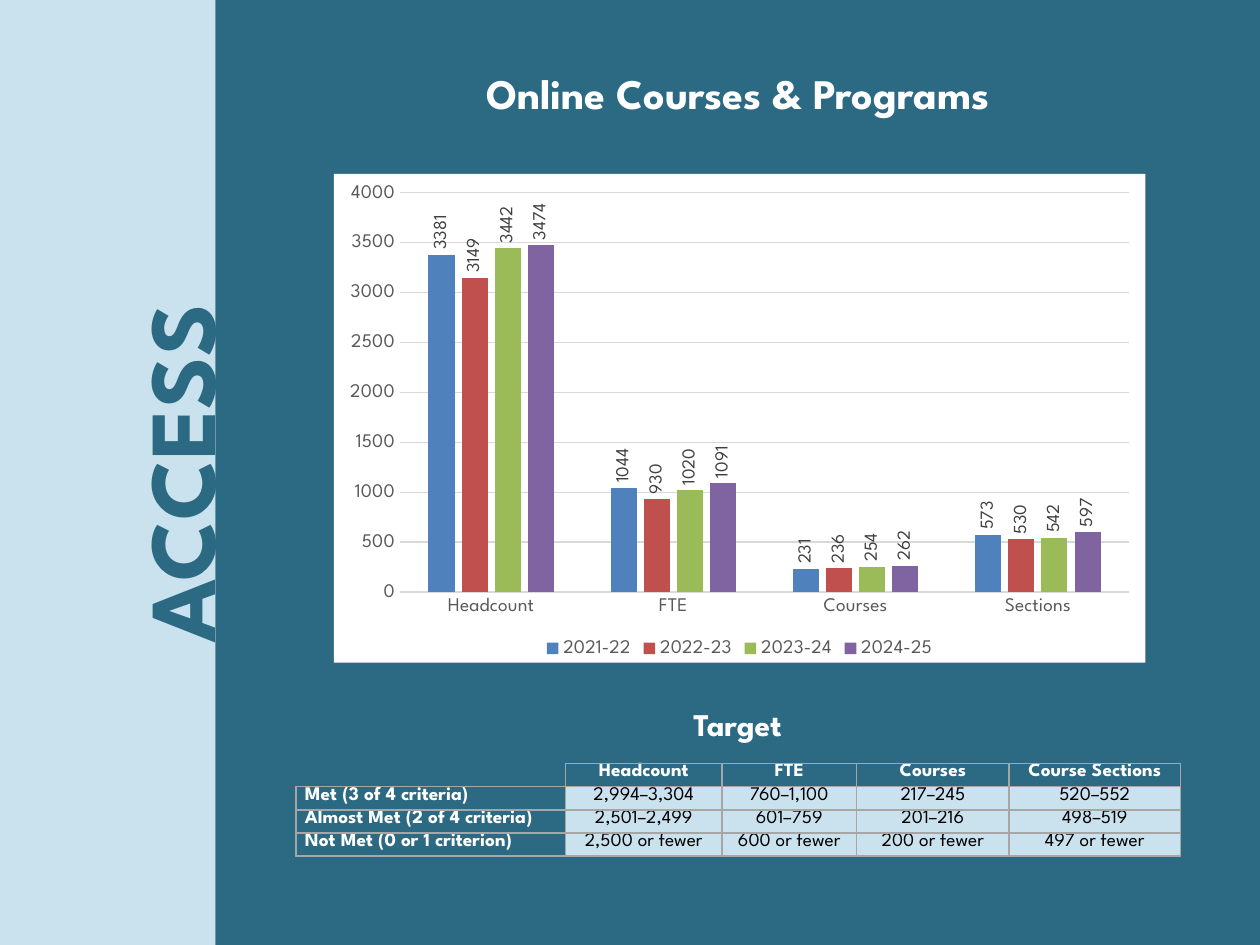
from dataclasses import dataclass

from lxml import etree
from pptx import Presentation
from pptx.chart.data import CategoryChartData
from pptx.dml.color import RGBColor
from pptx.enum import chart as ch, shapes, text
from pptx.oxml import parse_xml
from pptx.oxml.ns import nsdecls, qn
from pptx.util import Inches, Pt


@dataclass(frozen=True)
class Theme:
    font: str = "League Spartan"
    teal: str = "2C6983"
    pale: str = "C9E2ED"
    white: str = "FFFFFF"
    black: str = "000000"
    axis: str = "595959"
    label: str = "404040"
    grid: str = "D9D9D9"
    border: str = "A6A6A6"
    series: tuple = ("4F81BD", "C0504D", "9BBB59", "8064A2")
    banner: float = 54
    title: float = 24
    subtitle: float = 18
    body: float = 11
    data_label: float = 10.5


@dataclass(frozen=True)
class Box:
    left: float
    top: float
    width: float
    height: float

    def inches(self) -> tuple:
        return tuple(Inches(v) for v in (self.left, self.top, self.width, self.height))


@dataclass(frozen=True)
class Heading:
    wording: str
    box: Box
    size: float
    color: str
    rotation: float = 0
    space_after: float = 0


T = Theme()

PANELS = [(Box(0, 0, 1.71, 7.5), T.pale), (Box(1.71, 0, 8.29, 7.5), T.teal)]
HEADINGS = [
    Heading("ACCESS", Box(-2.33, 3.25, 7.5, 1.01), T.banner, T.teal, rotation=270),
    Heading("Online Courses & Programs", Box(2.03, 0.49, 7.65, 0.5), T.title, T.white,
            space_after=12),
    Heading("Target", Box(3.97, 5.55, 3.77, 0.4), T.subtitle, T.white),
]
CATEGORIES = ["Headcount", "FTE", "Courses", "Sections"]
YEARS = {
    "2021-22": (3381, 1044, 231, 573),
    "2022-23": (3149, 930, 236, 530),
    "2023-24": (3442, 1020, 254, 542),
    "2024-25": (3474, 1091, 262, 597),
}
TARGET_WIDTHS = [2.14, 1.24, 1.07, 1.21, 1.36]
TARGETS = [
    ["", "Headcount", "FTE", "Courses", "Course Sections"],
    ["Met (3 of 4 criteria)", "2,994–3,304", "760–1,100", "217–245", "520–552"],
    ["Almost Met (2 of 4 criteria)", "2,501–2,499", "601–759", "201–216", "498–519"],
    ["Not Met (0 or 1 criterion)", "2,500 or fewer", "600 or fewer", "200 or fewer",
     "497 or fewer"],
]


def style_font(font, size: float, color: str, bold: bool = False) -> None:
    font.name, font.size, font.bold = T.font, Pt(size), bold
    font.color.rgb = RGBColor.from_string(color)


def set_fill(fill, color: str) -> None:
    fill.solid()
    fill.fore_color.rgb = RGBColor.from_string(color)


def set_line(line, color: str, width: float) -> None:
    set_fill(line.fill, color)
    line.width = Pt(width)


def add_panel(slide, box: Box, color: str) -> None:
    sp = slide.shapes.add_shape(shapes.MSO_SHAPE.RECTANGLE, *box.inches())
    sp.shadow.inherit = False
    set_fill(sp.fill, color)
    sp.line.fill.background()


def add_heading(slide, heading: Heading) -> None:
    sp = slide.shapes.add_textbox(*heading.box.inches())
    sp.rotation = heading.rotation
    tf = sp.text_frame
    tf.word_wrap = True
    tf.auto_size = text.MSO_AUTO_SIZE.SHAPE_TO_FIT_TEXT
    p = tf.paragraphs[0]
    p.text = heading.wording
    p.alignment = text.PP_ALIGN.CENTER
    p.space_after = Pt(heading.space_after)
    style_font(p.runs[0].font, heading.size, heading.color, bold=True)


def add_enrollment_chart(slide, box: Box) -> None:
    data = CategoryChartData(number_format="0")
    data.categories = CATEGORIES
    for year, values in YEARS.items():
        data.add_series(year, values)
    chart = slide.shapes.add_chart(
        ch.XL_CHART_TYPE.COLUMN_CLUSTERED, *box.inches(), data).chart
    style_font(chart.font, T.body, T.black)
    chart.has_title = False

    # White chart area
    area = parse_xml(
        f'<c:spPr {nsdecls("c", "a")}><a:solidFill><a:srgbClr val="{T.white}"/>'
        '</a:solidFill><a:ln><a:noFill/></a:ln></c:spPr>')
    chart._chartSpace.find(qn("c:chart")).addnext(area)

    # Axes and legend
    for axis in (chart.category_axis, chart.value_axis):
        axis.major_tick_mark = axis.minor_tick_mark = ch.XL_TICK_MARK.NONE
        style_font(axis.tick_labels.font, T.body, T.axis)
    set_line(chart.category_axis.format.line, T.grid, 0.75)
    values = chart.value_axis
    values.minimum_scale, values.maximum_scale, values.major_unit = 0, 4000, 500
    values.format.line.fill.background()
    set_line(values.major_gridlines.format.line, T.grid, 0.75)
    chart.has_legend = True
    chart.legend.position = ch.XL_LEGEND_POSITION.BOTTOM
    chart.legend.include_in_layout = False
    style_font(chart.legend.font, T.body, T.axis)

    # Columns with upright labels
    plot = chart.plots[0]
    plot.gap_width, plot.overlap, plot.vary_by_categories = 219, -27, False
    for series, color in zip(plot.series, T.series):
        set_fill(series.format.fill, color)
        series.invert_if_negative = False
        labels = series.data_labels
        labels.show_value = True
        labels.number_format, labels.number_format_is_linked = "0", False
        labels.position = ch.XL_LABEL_POSITION.OUTSIDE_END
        style_font(labels.font, T.data_label, T.label)
        body = labels._element.find(qn("c:txPr")).find(qn("a:bodyPr"))
        body.set("rot", "-5400000")
        body.set("vert", "horz")


def set_borders(cell, hidden: str = "") -> None:
    props = cell._tc.get_or_add_tcPr()
    for index, side in enumerate("LRTB"):
        paint = "<a:noFill/>" if side in hidden else (
            f'<a:solidFill><a:srgbClr val="{T.border}"/></a:solidFill>')
        props.insert(index, parse_xml(
            f'<a:ln{side} {nsdecls("a")} w="{Pt(1)}">{paint}</a:ln{side}>'))


def add_target_table(slide, box: Box) -> None:
    table = slide.shapes.add_table(len(TARGETS), len(TARGET_WIDTHS), *box.inches()).table
    table.first_row = table.horz_banding = False
    for column, width in zip(table.columns, TARGET_WIDTHS):
        column.width = Inches(width)
    for i, row in enumerate(TARGETS):
        for j, wording in enumerate(row):
            cell = table.cell(i, j)
            is_value = i > 0 and j > 0
            cell.margin_left = cell.margin_right = Inches(0.07)
            cell.margin_top = cell.margin_bottom = 0
            set_fill(cell.fill, T.pale if is_value else T.teal)
            set_borders(cell, hidden="" if wording else "LT")
            p = cell.text_frame.paragraphs[0]
            p.alignment = text.PP_ALIGN.CENTER if j else text.PP_ALIGN.LEFT
            if wording:
                p.text = wording
                style_font(p.runs[0].font, T.body, T.black if is_value else T.white,
                           bold=not is_value)
            else:
                # Keeps the empty corner as low as the rest of its row
                etree.SubElement(p._p, qn("a:endParaRPr"), sz=str(T.body * 100))


def main() -> None:
    prs = Presentation()
    prs.slide_width, prs.slide_height = Inches(10), Inches(7.5)
    slide = prs.slides.add_slide(prs.slide_layouts[6])
    for box, color in PANELS:
        add_panel(slide, box, color)
    for heading in HEADINGS:
        add_heading(slide, heading)
    add_enrollment_chart(slide, Box(2.65, 1.38, 6.44, 3.88))
    add_target_table(slide, Box(2.35, 6.06, sum(TARGET_WIDTHS), 0.73))
    prs.save("out.pptx")


if __name__ == "__main__":
    main()
